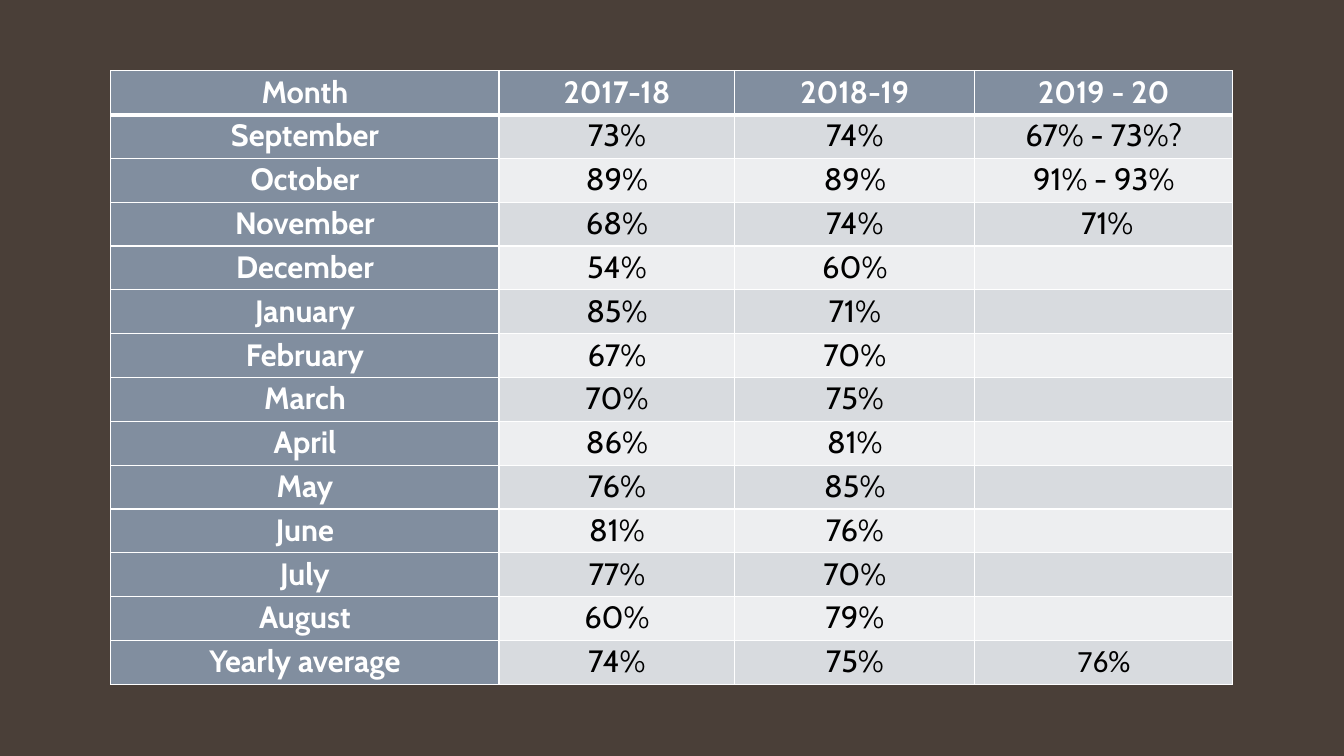
import pptx
import pptx.util
import pptx.dml.color
import pptx.enum.text
import pptx.oxml
import pptx.oxml.ns

Pt = pptx.util.Pt


def color(code):
    return pptx.dml.color.RGBColor.from_string(code)


def border(cell, sides):
    props = cell._tc.get_or_add_tcPr()
    for spot, (side, width) in enumerate(sides.items()):
        line = pptx.oxml.parse_xml(
            f'<a:ln{side} {pptx.oxml.ns.nsdecls("a")} w="{Pt(width)}">'
            '<a:solidFill><a:srgbClr val="FFFFFF"/></a:solidFill>'
            f'</a:ln{side}>')
        props.insert(spot, line)


data = [
    ("Month", "2017-18", "2018-19", "2019 - 20"),
    ("September", "73%", "74%", "67% - 73%?"),
    ("October", "89%", "89%", "91% - 93%"),
    ("November", "68%", "74%", " 71%"),
    ("December", "54%", "60%", ""),
    ("January", "85%", "71%", ""),
    ("February", "67%", "70%", ""),
    ("March", "70%", "75%", ""),
    ("April", "86%", "81%", ""),
    ("May", "76%", "85%", ""),
    ("June", "81%", "76%", ""),
    ("July", "77%", "70%", ""),
    ("August", "60%", "79%", ""),
    ("Yearly average", "74%", "75%", "76%"),
]
widths = [277.2, 168.5, 171.4, 184.3]
height = 31.32

deck = pptx.Presentation()
deck.slide_width = Pt(960)
deck.slide_height = Pt(540)
slide = deck.slides.add_slide(deck.slide_layouts[6])
slide.background.fill.solid()
slide.background.fill.fore_color.rgb = color("4A3F38")

table = slide.shapes.add_table(
    len(data), len(widths), Pt(79.2), Pt(50.6),
    Pt(sum(widths)), Pt(height * len(data))).table
for column, width in zip(table.columns, widths):
    column.width = Pt(width)

last = len(data) - 1
for i, texts in enumerate(data):
    table.rows[i].height = Pt(height)
    for j, text in enumerate(texts):
        cell = table.cell(i, j)
        head = i == 0 or j == 0
        cell.margin_left = cell.margin_right = Pt(8.6)
        cell.margin_top = cell.margin_bottom = 0
        cell.fill.solid()
        shade = "818E9F" if head else "D8DBDF" if i % 2 else "EDEEF0"
        cell.fill.fore_color.rgb = color(shade)
        border(cell, {"L": 1, "R": 1, "T": 3 if i == 1 else 1,
                      "B": 3 if i == 0 else 1})
        if text:
            para = cell.text_frame.paragraphs[0]
            para.alignment = pptx.enum.text.PP_ALIGN.CENTER
            para.line_spacing = 1.07
            run = para.add_run()
            run.text = text
            run.font.name = "Calibri" if (i, j) == (last, 3) else "Cabin"
            run.font.size = Pt(22)
            run.font.bold = head
            run.font.color.rgb = color("FFFFFF" if head else "000000")

deck.save("out.pptx")
